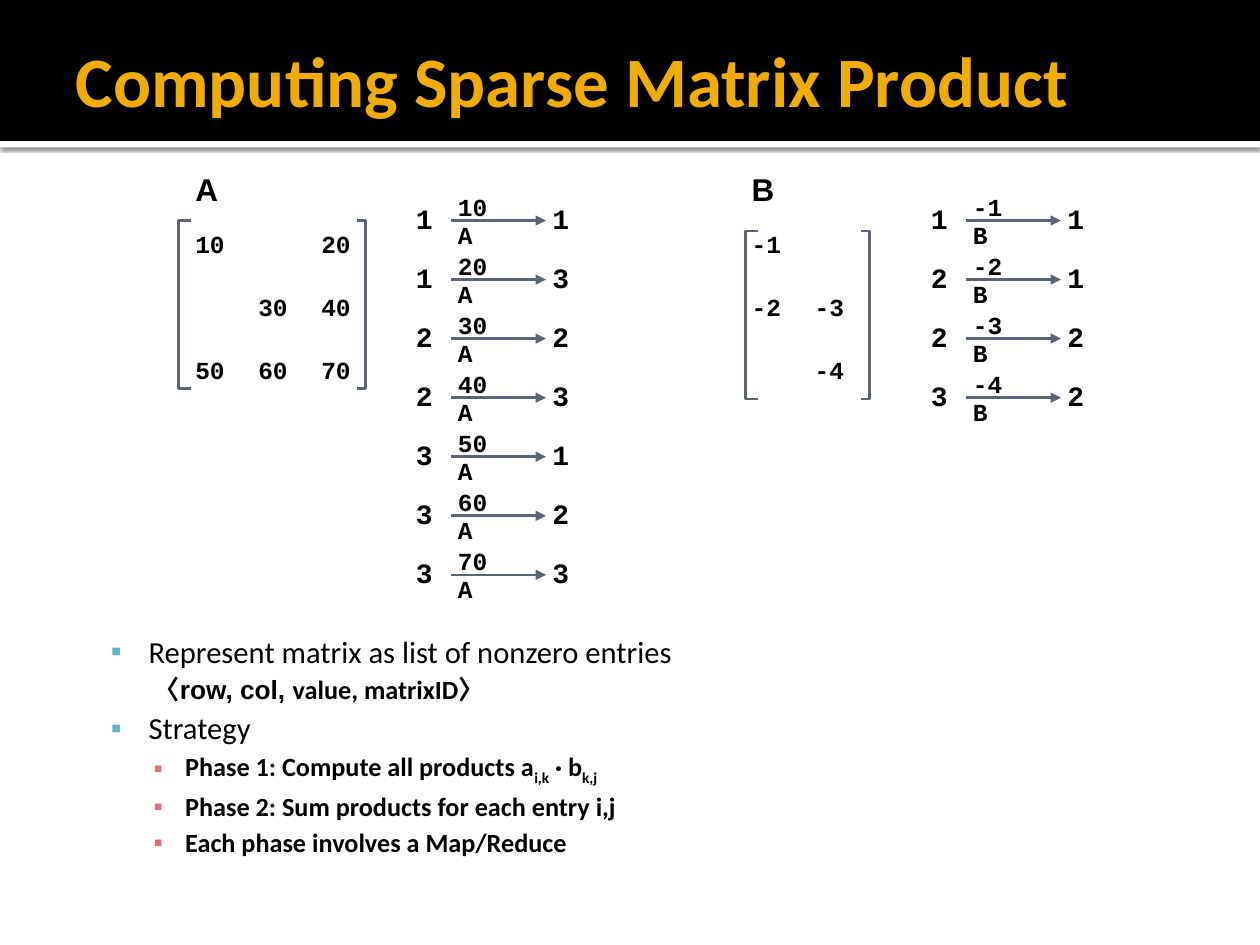
import lxml.etree
import pptx
import pptx.dml.color
import pptx.enum.shapes
import pptx.enum.text
import pptx.oxml
import pptx.oxml.ns
import pptx.util

Pt = pptx.util.Pt
qn = pptx.oxml.ns.qn
SLATE, BLACK, WHITE, GOLD = "5A6378", "000000", "FFFFFF", "F0AD00"
BLUE, PINK = "60B5CC", "E66C7D"
MIDDLE = pptx.enum.text.MSO_ANCHOR.MIDDLE
TOP = pptx.enum.text.MSO_ANCHOR.TOP


def rgb(value):
    """Turn a hex string into a colour."""
    return pptx.dml.color.RGBColor.from_string(value)


def write(paragraph, text, size=14, font="Courier New", color=BLACK, bold=True, baseline=0):
    """Add one formatted run to a paragraph."""
    run = paragraph.add_run()
    run.text = text
    run.font.size, run.font.name, run.font.bold = Pt(size), font, bold
    run.font.color.rgb = rgb(color)
    if baseline:
        run.font._element.set("baseline", str(baseline * 1000))


def set_frame(frame, insets, anchor):
    """Set the wrapping, insets and anchor of a text frame."""
    frame.word_wrap = True
    frame.auto_size = pptx.enum.text.MSO_AUTO_SIZE.NONE
    frame.vertical_anchor = anchor
    (frame.margin_left, frame.margin_top,
     frame.margin_right, frame.margin_bottom) = map(Pt, insets)


def add_label(slide, box, text, anchor=MIDDLE, **style):
    """Place a one-line label in a box and return it."""
    label = slide.shapes.add_textbox(*map(Pt, box))
    set_frame(label.text_frame, (3.6,) * 4, anchor)
    paragraph = label.text_frame.paragraphs[0]
    paragraph.line_spacing = 0.9
    write(paragraph, text, **style)
    return label


def add_band(slide, box, color):
    """Place a plain filled band behind the title."""
    band = slide.shapes.add_shape(pptx.enum.shapes.MSO_SHAPE.RECTANGLE, *map(Pt, box))
    band.shadow.inherit = False
    band.fill.solid()
    band.fill.fore_color.rgb = rgb(color)
    band.line.fill.background()
    slide.shapes.title.element.addprevious(band.element)
    return band


def add_header(slide, box, text):
    """Place the title on its black band with a shadowed white strip below."""
    left, top, width, height = box
    strip = add_band(slide, (left, top + height, width, 3.6), WHITE)
    effects = strip.element.spPr.find(qn("a:effectLst"))
    shadow = lxml.etree.SubElement(effects, qn("a:outerShdw"), blurRad=str(Pt(2.5)),
                                   dist=str(Pt(0.8)), dir="5400000", rotWithShape="0")
    shade = lxml.etree.SubElement(shadow, qn("a:srgbClr"), val=BLACK)
    lxml.etree.SubElement(shade, qn("a:alpha"), val="60000")
    add_band(slide, box, BLACK)
    title = slide.shapes.title
    title.left, title.top = Pt(left + 36), Pt(top + 6)
    title.width, title.height = Pt(width - 72), Pt(78)
    set_frame(title.text_frame, (7.2, 3.6, 3.6, 3.6), MIDDLE)
    paragraph = title.text_frame.paragraphs[0]
    paragraph.alignment = pptx.enum.text.PP_ALIGN.LEFT
    write(paragraph, text, size=40.5, font="Calibri", color=GOLD)


def add_bracket(slide, outer, inner, top, height):
    """Draw one square bracket whose ticks reach from outer to inner."""
    builder = slide.shapes.build_freeform(Pt(inner), Pt(top))
    corners = [(outer, top), (outer, top + height), (inner, top + height)]
    builder.add_line_segments([(Pt(x), Pt(y)) for x, y in corners], close=False)
    bracket = builder.convert_to_shape()
    bracket.shadow.inherit = False
    bracket.fill.background()
    bracket.line.color.rgb = rgb(SLATE)
    bracket.line.width = Pt(1.5)


def add_matrix(slide, box, name, entries, columns, bracket_box):
    """Place a named matrix of nonzero entries between brackets."""
    left, top = box
    cell = 36
    add_label(slide, (left, top, columns * cell, 26.6), name, anchor=TOP, size=18, font="Arial")
    for row, column, value in entries:
        place = (left + (column - 1) * cell, top + 26.4 + (row - 1) * cell, cell, cell)
        add_label(slide, place, value)
    x, y, width, height = bracket_box
    add_bracket(slide, x, x + 7.2, y, height)
    add_bracket(slide, x + width, x + width - 4.8, y, height)


def add_entry_list(slide, box, name, entries):
    """List matrix entries as arrows from row number to column number."""
    left, top = box
    side, reach, pitch = 24, 54, 33.75
    for index, (row, column, value) in enumerate(entries):
        y = top + index * pitch
        source = add_label(slide, (left, y + 6, side, side), str(row), size=16)
        target = add_label(slide, (left + side + reach, y + 6, side, side), str(column), size=16)
        arrow = slide.shapes.add_connector(pptx.enum.shapes.MSO_CONNECTOR.STRAIGHT, 0, 0, 0, 0)
        arrow.begin_connect(source, 3)
        arrow.end_connect(target, 1)
        arrow.line.color.rgb = rgb(SLATE)
        arrow.line.width = Pt(1.5)
        lxml.etree.SubElement(arrow.line._get_or_add_ln(), qn("a:tailEnd"), type="triangle")
        lxml.etree.SubElement(arrow.element.spPr, qn("a:effectLst"))
        add_label(slide, (left + side, y, reach, 22.3), value)
        add_label(slide, (left + side, y + 15.8, reach, 22.3), name)


def add_strategy(slide, box, items):
    """Place the two-level list; each item is level, bullet colour and runs."""
    frame = slide.shapes.add_textbox(*map(Pt, box)).text_frame
    set_frame(frame, (4.3, 7.2, 7.2, 3.6), TOP)
    styles = {1: (57.6, -21.6, 17.5, False), 2: (78.5, -18, 15, True)}
    for index, (level, bullet_color, runs) in enumerate(items):
        paragraph = frame.add_paragraph() if index else frame.paragraphs[0]
        margin, indent, size, bold = styles[level]
        paragraph.level = level - 1
        paragraph.space_before = Pt(2.5)
        properties = paragraph._p.get_or_add_pPr()
        properties.set("marL", str(Pt(margin)))
        properties.set("indent", str(Pt(indent)))
        if bullet_color:
            color = lxml.etree.SubElement(properties, qn("a:buClr"))
            lxml.etree.SubElement(color, qn("a:srgbClr"), val=bullet_color)
            lxml.etree.SubElement(properties, qn("a:buFont"), typeface="Arial")
            lxml.etree.SubElement(properties, qn("a:buChar"), char="▪")
        else:
            lxml.etree.SubElement(properties, qn("a:buNone"))
        for text, style in runs:
            write(paragraph, text, **{"size": size, "bold": bold, "font": "Calibri", **style})


def main():
    """Build the slide and save it."""
    deck = pptx.Presentation()
    deck.slide_width, deck.slide_height = Pt(720), Pt(540)
    slide = deck.slides.add_slide(deck.slide_layouts[5])
    add_header(slide, (0, 0, 720, 80.6), "Computing Sparse Matrix Product")

    entries_a = [(1, 1, "10"), (1, 3, "20"), (2, 2, "30"), (2, 3, "40"),
                 (3, 1, "50"), (3, 2, "60"), (3, 3, "70")]
    entries_b = [(1, 1, "-1"), (2, 1, "-2"), (2, 2, "-3"), (3, 2, "-4")]
    add_matrix(slide, (108, 96), "A", entries_a, 3, (102, 126, 106.8, 96))
    add_matrix(slide, (426, 96), "B", entries_b, 2, (426, 132, 70.8, 96))
    add_entry_list(slide, (234, 108), "A", entries_a)
    add_entry_list(slide, (528.3, 108), "B", entries_b)

    subscript = {"baseline": -25}
    add_strategy(slide, (23, 354.2, 653.8, 128.9), [
        (1, BLUE, [("Represent matrix as list of nonzero entries", {})]),
        (2, None, [("〈", {}), ("row, col, ", {"font": "Arial"}), ("value, matrixID〉", {})]),
        (1, BLUE, [("Strategy", {})]),
        (2, PINK, [("Phase 1: Compute all products a", {}), ("i,k", subscript),
                   (" · b", {}), ("k,j", subscript)]),
        (2, PINK, [("Phase 2: Sum products for each entry i,j", {})]),
        (2, PINK, [("Each phase involves a Map/Reduce", {})]),
    ])
    deck.save("out.pptx")


if __name__ == "__main__":
    main()
